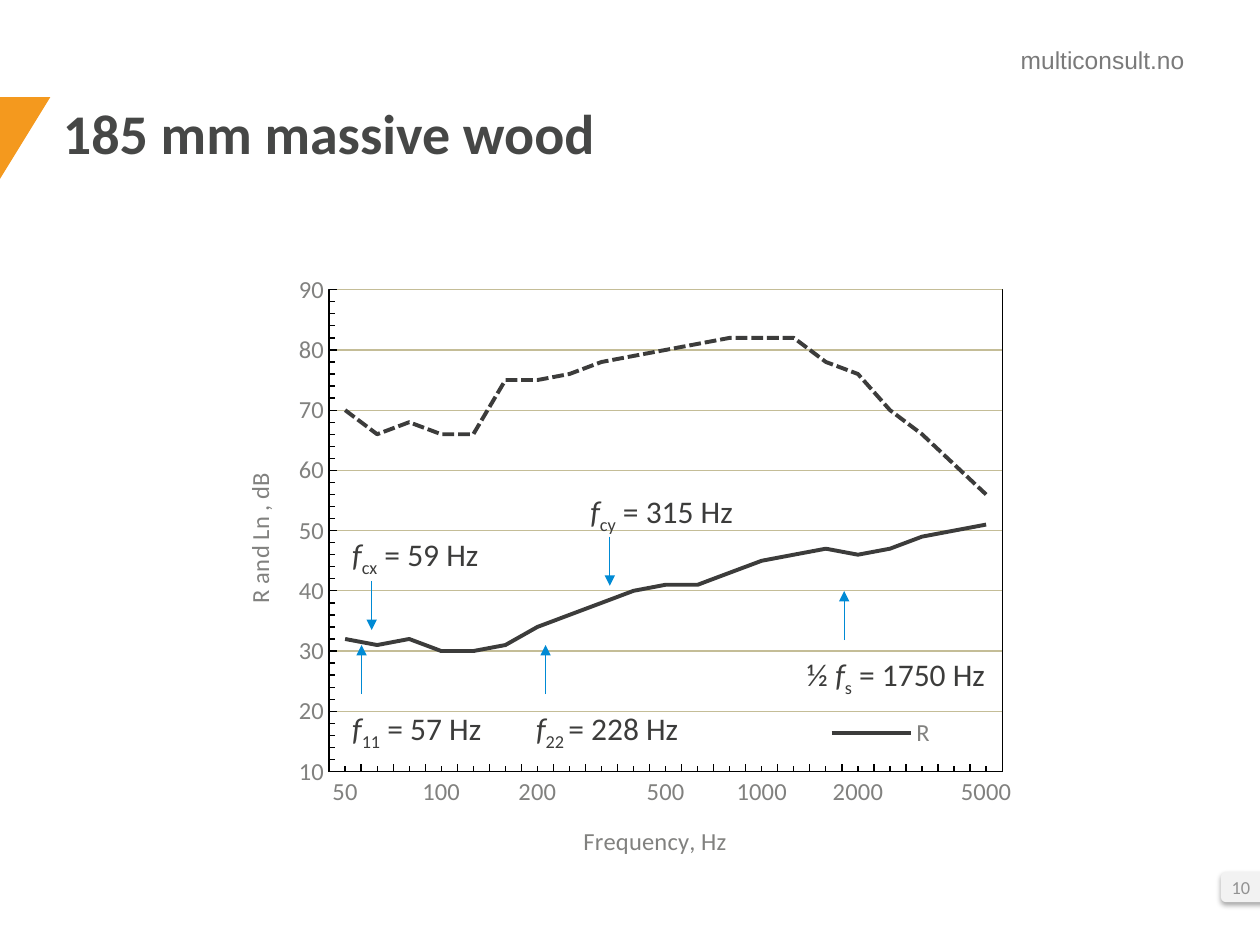
from dataclasses import dataclass

from pptx import Presentation
from pptx.chart.data import CategoryChartData
from pptx.dml.color import RGBColor
from pptx.enum.chart import XL_CHART_TYPE, XL_LEGEND_POSITION, XL_TICK_MARK
from pptx.enum.dml import MSO_LINE
from pptx.enum.shapes import MSO_CONNECTOR, MSO_SHAPE
from pptx.enum.text import MSO_ANCHOR, MSO_AUTO_SIZE, PP_ALIGN
from pptx.oxml import parse_xml
from pptx.oxml.ns import nsdecls, qn
from pptx.util import Inches, Pt

HUES = {
    "ink": "3C3C3B", "title": "464746", "label": "81817F", "site": "7A7A7A",
    "page": "929292", "tab": "F2F2F2", "wedge": "F4991E", "arrow": "008AD4",
    "grid": "C4BD97", "axis": "000000", "white": "FFFFFF",
}
BANDS = {0: "50", 3: "100", 6: "200", 10: "500", 13: "1000", 16: "2000", 20: "5000"}
CURVES = {
    "R": [32, 31, 32, 30, 30, 31, 34, 36, 38, 40, 41, 41, 43, 45, 46, 47, 46, 47, 49, 50, 51],
    "Ln ": [70, 66, 68, 66, 66, 75, 75, 76, 78, 79, 80, 81, 82, 82, 82, 78, 76, 70, 66, 61, 56],
}
REACH = 0.39


@dataclass
class Note:
    """A frequency label with its arrow."""
    left: float
    top: float
    lead: str
    sub: str
    tail: str
    stem: float
    start: float
    step: float
    width: float = 1.5


NOTES = [
    Note(4.1, 5.58, " ", "22 ", "= 228 Hz", 4.33, 5.51, -REACH),
    Note(2.64, 5.58, " ", "11", " = 57 Hz", 2.87, 5.51, -REACH),
    Note(6.25, 5.15, " ½ ", "s", " = 1750 Hz", 6.7, 5.08, -REACH, 1.72),
    Note(4.53, 3.86, " ", "cy", " = 315 Hz", 4.84, 4.26, REACH),
    Note(2.64, 4.2, " ", "cx", " = 59 Hz", 2.95, 4.61, REACH),
]


def hue(name: str) -> RGBColor:
    """Look up a colour."""
    return RGBColor.from_string(HUES[name])


def put(thing, form: dict) -> None:
    """Set attributes from a dict of values."""
    for key, value in form.items():
        setattr(thing, key, value)


def style(font, size: float, color: str, face: str = "Calibri", **more) -> None:
    """Format a font."""
    put(font, {"size": Pt(size), "name": face, **more})
    font.color.rgb = hue(color)


def stroke(line, color: str, width: float = 0.75) -> None:
    """Format a line."""
    line.color.rgb = hue(color)
    line.width = Pt(width)


def box(slide, area: tuple, **form):
    """Add a wrapped text box and return its first paragraph."""
    frame = slide.shapes.add_textbox(*map(Inches, area)).text_frame
    put(frame, {"word_wrap": True, **form})
    return frame.paragraphs[0]


def write(para, text: str, size: float, color: str, face: str = "Calibri", **more):
    """Add a formatted run."""
    run = para.add_run()
    run.text = text
    style(run.font, size, color, face, **more)
    return run


def place(x: float, y: float, w: float, h: float, inner: str = ""):
    """Make a manual chart layout."""
    spots = "".join(f'<c:{key} val="{val}"/>' for key, val in zip("xywh", (x, y, w, h)))
    return parse_xml(
        f'<c:layout {nsdecls("c")}><c:manualLayout>{inner}<c:xMode val="edge"/>'
        f'<c:yMode val="edge"/>{spots}</c:manualLayout></c:layout>')


def clear(root) -> None:
    """Drop the default layout."""
    for old in root.findall(qn("c:layout")):
        root.remove(old)


def paint(body: str):
    """Make chart shape properties."""
    return parse_xml(f'<c:spPr {nsdecls("c", "a")}>{body}</c:spPr>')


def solid(name: str) -> str:
    """Make a solid fill in XML."""
    return f'<a:solidFill><a:srgbClr val="{HUES[name]}"/></a:solidFill>'


def scale(axis, title: str) -> None:
    """Format a chart axis."""
    put(axis, {"major_tick_mark": XL_TICK_MARK.INSIDE, "minor_tick_mark": XL_TICK_MARK.INSIDE})
    style(axis.tick_labels.font, 14, "label")
    stroke(axis.format.line, "axis")
    para = axis.axis_title.text_frame.paragraphs[0]
    write(para, title, 14, "label", bold=False)


def plot(slide) -> None:
    """Add the line chart."""
    data = CategoryChartData(number_format="0")
    data.categories = [BANDS.get(spot, "") for spot in range(21)]
    for name, vals in CURVES.items():
        data.add_series(name, vals)
    area = map(Inches, (1.89, 2.01, 6.22, 4.91))
    chart = slide.shapes.add_chart(XL_CHART_TYPE.LINE, *area, data).chart
    put(chart, {"has_title": False, "has_legend": True})
    style(chart.font, 14, "ink")
    chart.plots[0].vary_by_categories = False
    for curve in chart.series:
        curve.smooth = False
        stroke(curve.format.line, "ink", 2.25)
    chart.series[1].format.line.dash_style = MSO_LINE.SQUARE_DOT

    base, side = chart.category_axis, chart.value_axis
    scale(base, "Frequency, Hz")
    scale(side, " R and Ln , dB")
    put(side, {"minimum_scale": 10, "maximum_scale": 90, "major_unit": 10, "minor_unit": 2})
    put(side.tick_labels, {"number_format": "0", "number_format_is_linked": False})
    stroke(side.major_gridlines.format.line, "grid")
    skip = parse_xml(f'<c:tickLblSkip {nsdecls("c")} val="1"/>')
    base._element.find(qn("c:noMultiLvlLbl")).addprevious(skip)

    key = chart.legend
    put(key, {"position": XL_LEGEND_POSITION.BOTTOM, "include_in_layout": True})
    style(key.font, 14, "label")
    clear(key._element)
    entry = parse_xml(
        f'<c:legendEntry {nsdecls("c")}><c:idx val="1"/><c:delete val="1"/></c:legendEntry>')
    key._element.find(qn("c:legendPos")).addnext(entry)
    entry.addnext(place(0.73, 0.74, 0.18, 0.07))

    root = chart._chartSpace.find(qn("c:chart"))
    field = root.find(qn("c:plotArea"))
    clear(field)
    field.insert(0, place(0.116, 0.059, 0.859, 0.779, '<c:layoutTarget val="inner"/>'))
    field.append(paint(f'<a:noFill/><a:ln w="9525">{solid("axis")}</a:ln>'))
    root.addnext(paint(f'{solid("white")}<a:ln><a:noFill/></a:ln>'))


def mark(slide, note: Note) -> None:
    """Draw a frequency label and its arrow."""
    ends = (note.stem, note.start, note.stem, note.start + note.step)
    arrow = slide.shapes.add_connector(MSO_CONNECTOR.STRAIGHT, *map(Inches, ends))
    stroke(arrow.line, "arrow")
    arrow.line._get_or_add_ln().append(parse_xml(f'<a:tailEnd {nsdecls("a")} type="triangle"/>'))
    arrow._element.spPr.append(parse_xml(f'<a:effectLst {nsdecls("a")}/>'))
    para = box(slide, (note.left, note.top, note.width, 0.4),
               auto_size=MSO_AUTO_SIZE.SHAPE_TO_FIT_TEXT)
    write(para, note.lead, 18, "ink")
    write(para, "f", 18, "ink", italic=True)
    low = write(para, note.sub, 18, "ink")
    low.font._element.set("baseline", "-25000")
    write(para, note.tail, 18, "ink")


def frame(slide) -> None:
    """Draw the title, web address, wedge and page tab."""
    para = box(slide, (6.83, 0.31, 2.67, 0.34), auto_size=MSO_AUTO_SIZE.SHAPE_TO_FIT_TEXT)
    para.alignment = PP_ALIGN.RIGHT
    write(para, "multiconsult.no", 14, "site", "Arial")

    pen = slide.shapes.build_freeform(0, Inches(0.77))
    pen.add_line_segments([(0, Inches(1.42)), (Inches(0.4), Inches(0.77))], close=True)
    wedge = pen.convert_to_shape()
    tab = slide.shapes.add_shape(
        MSO_SHAPE.ROUNDED_RECTANGLE, *map(Inches, (9.69, 6.92, 0.5, 0.24)))
    for shape, color in ((wedge, "wedge"), (tab, "tab")):
        shape.shadow.inherit = False
        shape.fill.solid()
        shape.fill.fore_color.rgb = hue(color)
        shape.line.fill.background()
    tab._element.spPr.find(qn("a:effectLst")).append(parse_xml(
        f'<a:outerShdw {nsdecls("a")} blurRad="{Pt(3.1)}" dist="{Pt(1.8)}" dir="5400000">'
        f'<a:srgbClr val="{HUES["axis"]}"><a:alpha val="35000"/></a:srgbClr></a:outerShdw>'))

    para = box(slide, (9.53, 6.84, 0.49, 0.4), vertical_anchor=MSO_ANCHOR.MIDDLE)
    para.alignment = PP_ALIGN.RIGHT
    write(para, "10", 10.5, "page")
    para = box(slide, (0.5, 0.84, 9, 0.99), margin_left=0, margin_top=0,
               margin_right=0, margin_bottom=Inches(0.05))
    para.line_spacing = 0.9
    write(para, "185 mm massive wood", 32, "title", bold=True)


def main() -> None:
    """Build the slide."""
    deck = Presentation()
    put(deck, {"slide_width": Inches(10), "slide_height": Inches(7.5)})
    slide = deck.slides.add_slide(deck.slide_layouts[6])
    frame(slide)
    plot(slide)
    for note in NOTES:
        mark(slide, note)
    deck.save("out.pptx")


if __name__ == "__main__":
    main()
